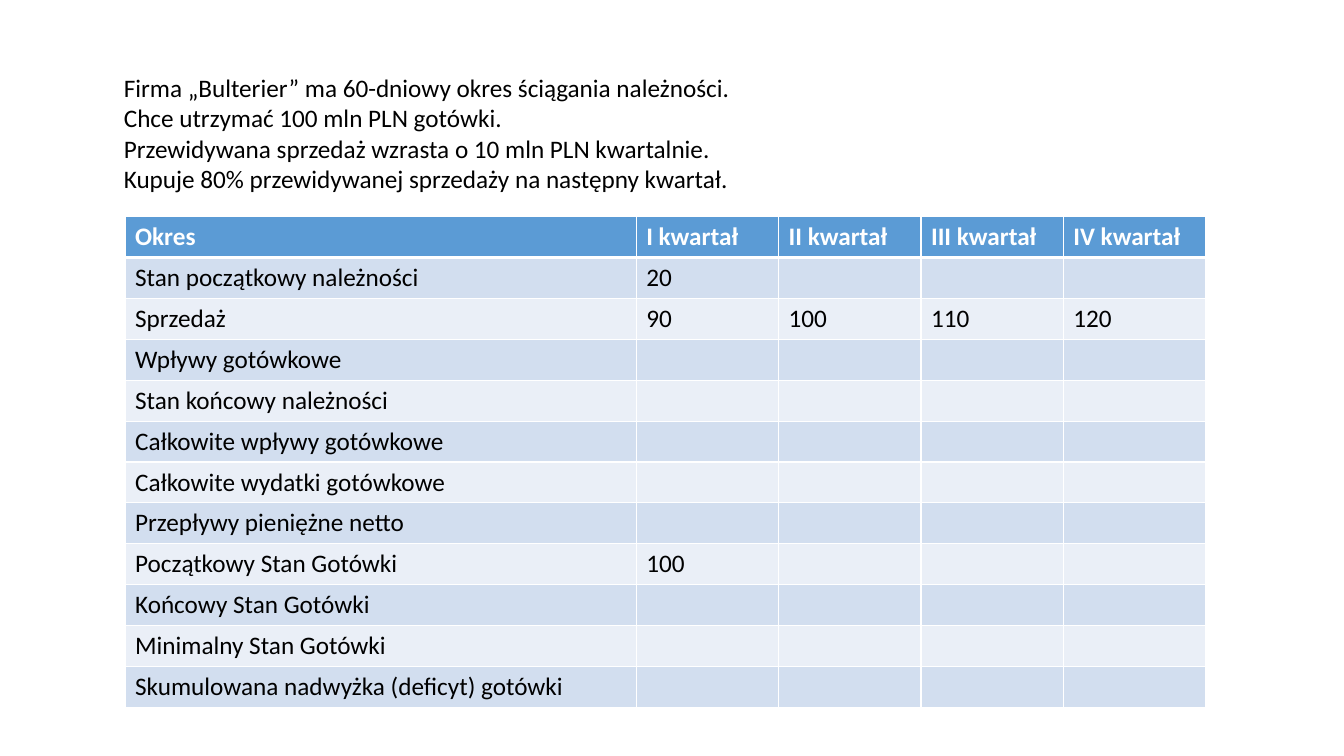
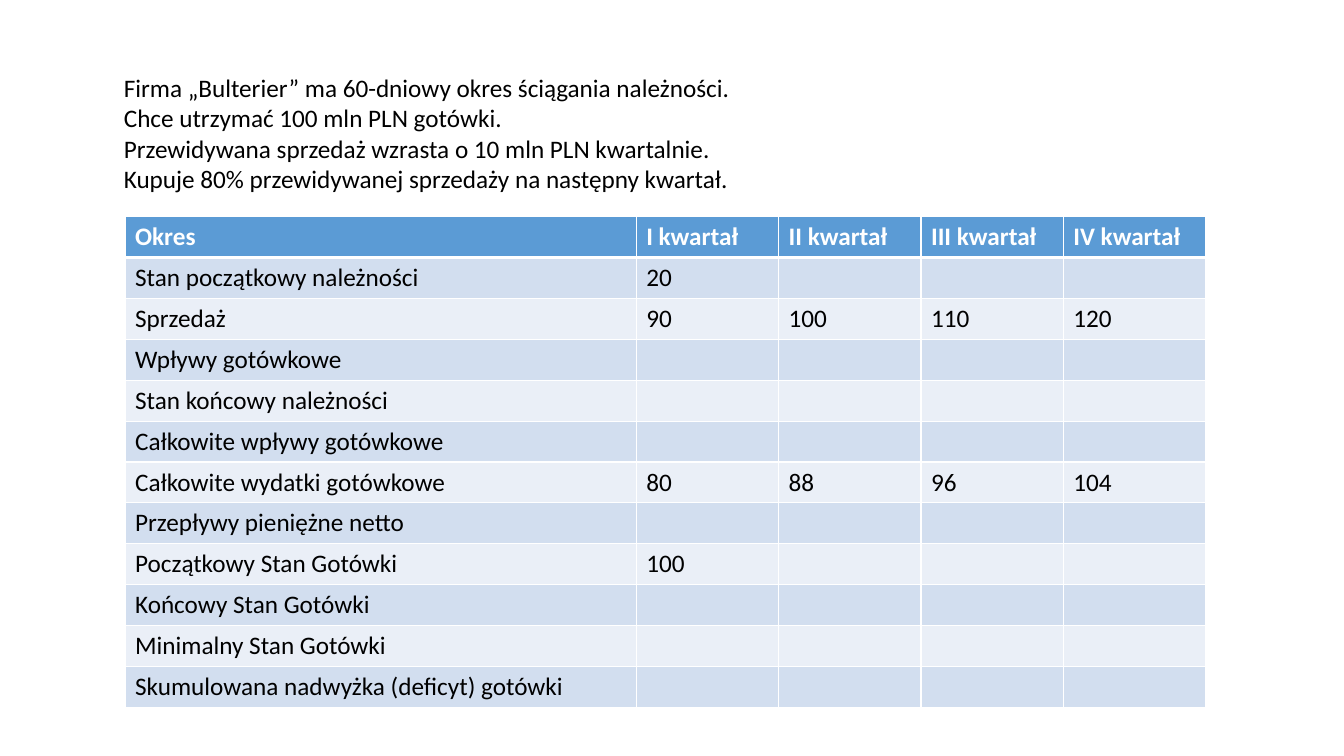
"""Build two slides of a quarterly cash budget exercise."""
from lxml.etree import SubElement
from pptx import Presentation
from pptx.dml.color import RGBColor
from pptx.enum.text import MSO_AUTO_SIZE
from pptx.oxml.ns import qn
from pptx.util import Inches, Pt

FONT = "Calibri"
BLACK = RGBColor(0x00, 0x00, 0x00)
WHITE = RGBColor(0xFF, 0xFF, 0xFF)
BLUE = RGBColor(0x5B, 0x9B, 0xD5)
BANDS = (RGBColor(0xEA, 0xEF, 0xF7), RGBColor(0xD2, 0xDE, 0xEF))

INTRO = [
    "Firma „Bulterier” ma 60-dniowy okres ściągania należności.",
    "Chce utrzymać 100 mln PLN gotówki.",
    "Przewidywana sprzedaż wzrasta o 10 mln PLN kwartalnie.",
    "Kupuje 80% przewidywanej sprzedaży na następny kwartał.",
]
HEAD = ["Okres", "I kwartał", "II kwartał", "III kwartał", "IV kwartał"]
COSTS = "Całkowite wydatki gotówkowe"
LABELS = [
    "Stan początkowy należności",
    "Sprzedaż",
    "Wpływy gotówkowe",
    "Stan końcowy należności",
    "Całkowite wpływy gotówkowe",
    COSTS,
    "Przepływy pieniężne netto",
    "Początkowy Stan Gotówki",
    "Końcowy Stan Gotówki",
    "Minimalny Stan Gotówki",
    "Skumulowana nadwyżka (deficyt) gotówki",
]
GIVEN = {
    "Stan początkowy należności": [20],
    "Sprzedaż": [90, 100, 110, 120],
    "Początkowy Stan Gotówki": [100],
}
SLIDES = [GIVEN, {**GIVEN, COSTS: [80, 88, 96, 104]}]

LEFT, TOP, WIDTH, HEIGHT = 1.24, 2.15, 10.72, 4.87
FIRST = 5.07


def write(frame, lines, size=18, color=BLACK, bold=False):
    for i, line in enumerate(lines):
        para = frame.add_paragraph() if i else frame.paragraphs[0]
        font = para.font
        if line:
            run = para.add_run()
            run.text = line
            font = run.font
        font.name, font.size, font.bold = FONT, Pt(size), bold
        font.color.rgb = color


def border(cell, **widths):
    props = cell._tc.get_or_add_tcPr()
    for side in "LRTB":
        line = SubElement(props, qn(f"a:ln{side}"), w=str(Pt(widths.get(side, 1))))
        fill = SubElement(line, qn("a:solidFill"))
        SubElement(fill, qn("a:srgbClr"), val=str(WHITE))


def add_grid(slide, values):
    rows = [HEAD] + [[name, *map(str, values.get(name, []))] for name in LABELS]
    count = len(HEAD)
    table = slide.shapes.add_table(
        len(rows), count, Inches(LEFT), Inches(TOP), Inches(WIDTH), Inches(HEIGHT)
    ).table
    for c, col in enumerate(table.columns):
        col.width = Inches((WIDTH - FIRST) / (count - 1) if c else FIRST)
    for r, row in enumerate(rows):
        table.rows[r].height = Inches(HEIGHT / len(rows))
        row = row + [""] * (count - len(row))
        for c, text in enumerate(row):
            cell = table.cell(r, c)
            border(cell, T=3 if r == 1 else 1, B=1 if r else 3)
            cell.fill.solid()
            cell.fill.fore_color.rgb = BANDS[r % 2] if r else BLUE
            write(cell.text_frame, [text], color=BLACK if r else WHITE, bold=not r)


def add_intro(slide):
    box = slide.shapes.add_textbox(Inches(1.13), Inches(0.67), Inches(10.95), Inches(1.62))
    frame = box.text_frame
    frame.word_wrap = True
    frame.auto_size = MSO_AUTO_SIZE.SHAPE_TO_FIT_TEXT
    write(frame, INTRO)


def main():
    deck = Presentation()
    deck.slide_width, deck.slide_height = Inches(13.33), Inches(7.5)
    for values in SLIDES:
        slide = deck.slides.add_slide(deck.slide_layouts[6])
        add_grid(slide, values)
        add_intro(slide)
    deck.save("out.pptx")


if __name__ == "__main__":
    main()
